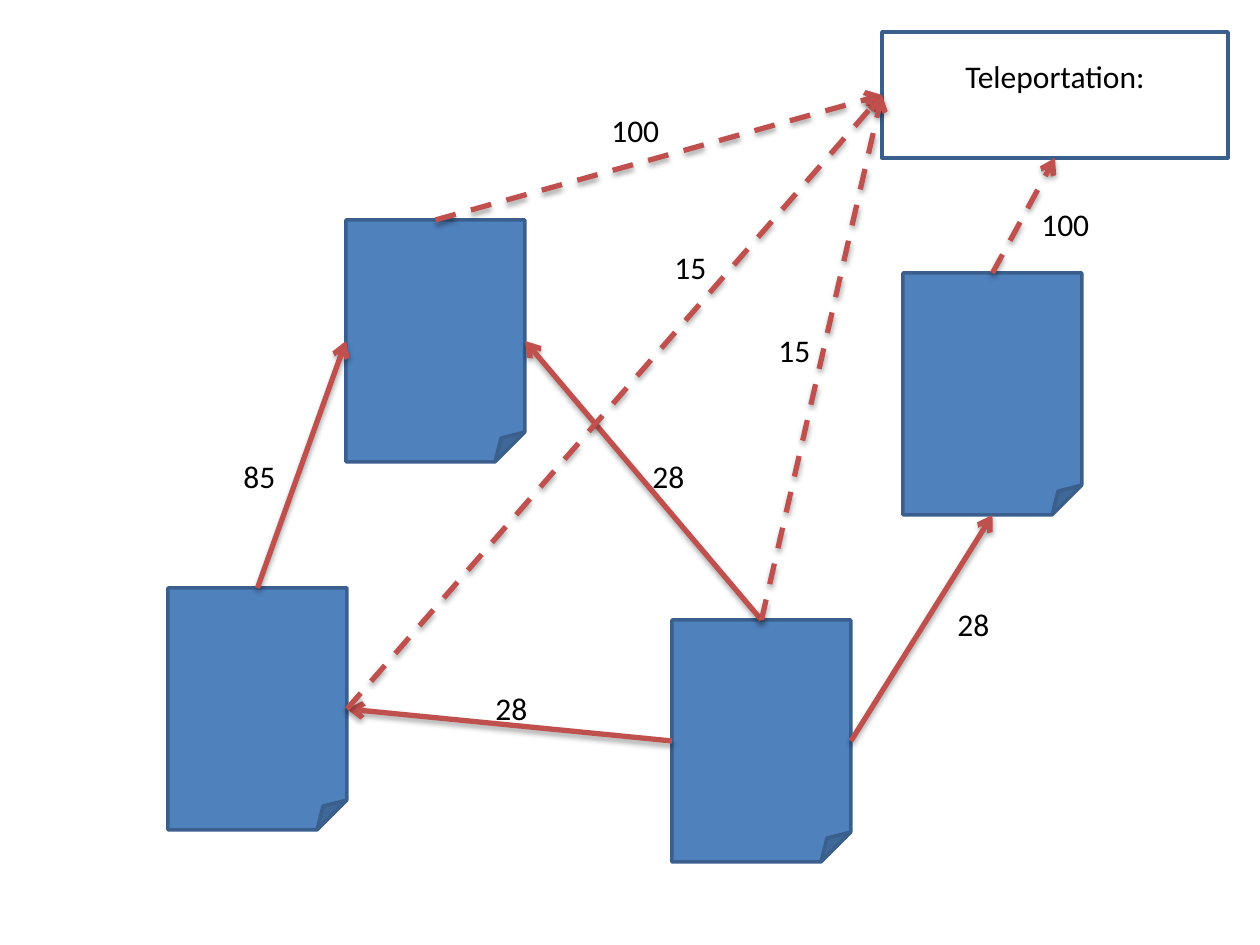
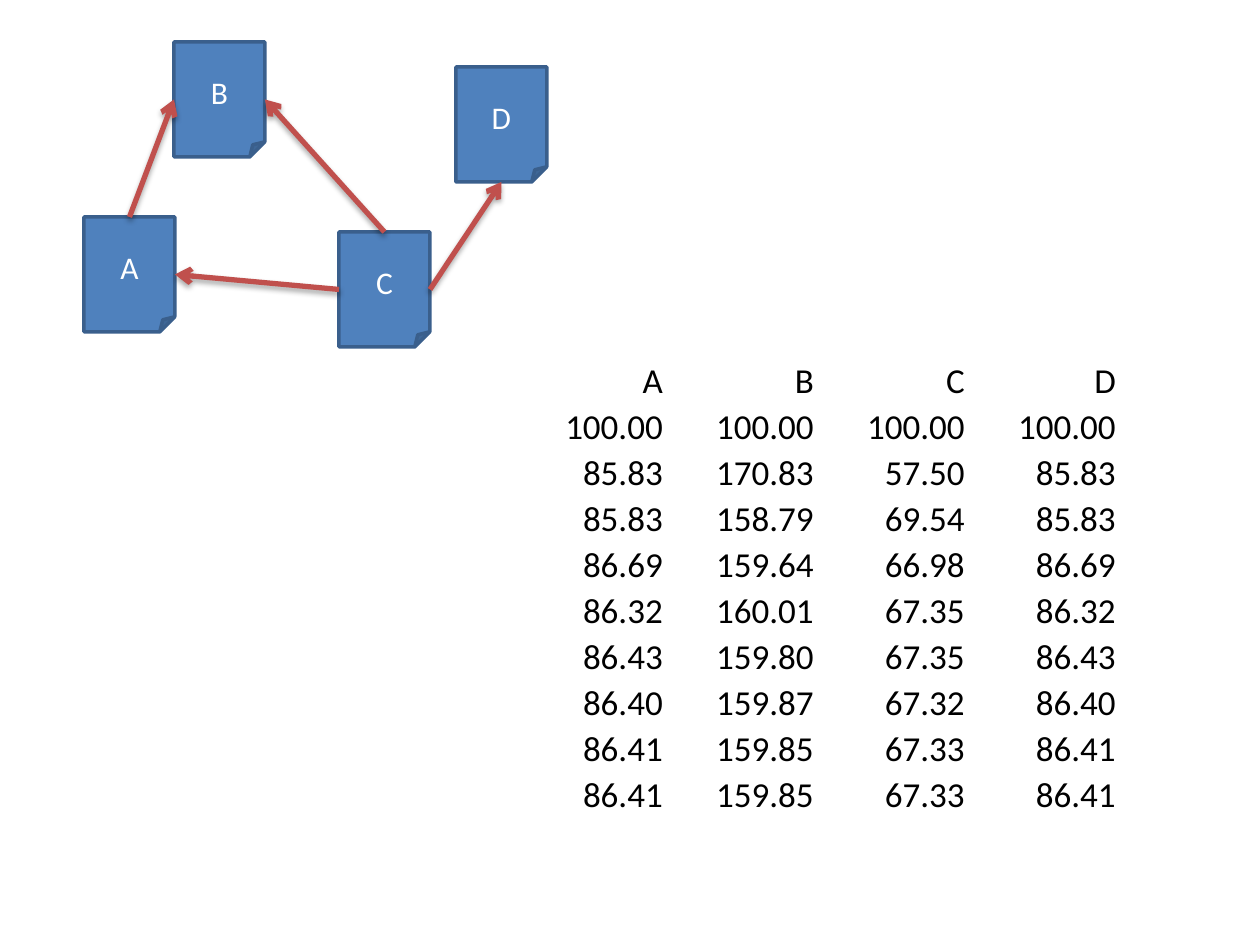
"""Build two slides on page rank: a link graph with teleportation, and its iterations."""
from lxml import etree
from pptx import Presentation
from pptx.dml.color import RGBColor
from pptx.enum.dml import MSO_LINE_DASH_STYLE as DASH
from pptx.enum.shapes import MSO_CONNECTOR as CONNECTOR, MSO_SHAPE as SHAPE
from pptx.enum.text import MSO_ANCHOR as ANCHOR, MSO_AUTO_SIZE as AUTO_SIZE, PP_ALIGN as ALIGN
from pptx.oxml import parse_xml
from pptx.oxml.ns import nsdecls, qn
from pptx.util import Pt

PX = 914400 // 126
FONT = "Calibri"
BLUE, DARK_BLUE, RED = "4F81BD", "3A5F8C", "C0504D"
BLACK, WHITE = "000000", "FFFFFF"
TOP, LEFT, BOTTOM, RIGHT = range(4)
PAGE_LINKS = [
    ("A", TOP, "B", LEFT),
    ("C", TOP, "B", RIGHT),
    ("C", LEFT, "A", RIGHT),
    ("C", RIGHT, "D", BOTTOM),
]
SHADOW = (
    f'<a:effectLst {nsdecls("a")}>'
    '<a:outerShdw blurRad="40000" dist="23000" dir="5400000" rotWithShape="0">'
    f'<a:srgbClr val="{BLACK}"><a:alpha val="35000"/></a:srgbClr>'
    '</a:outerShdw></a:effectLst>'
)


def write(text_frame, text, color, size=18, alignment=ALIGN.CENTER):
    text_frame.text = text
    paragraph = text_frame.paragraphs[0]
    paragraph.alignment = alignment
    font = paragraph.runs[0].font
    font.name, font.size = FONT, Pt(size)
    font.color.rgb = RGBColor.from_string(color)


def add_arrow(shapes, start, start_side, end, end_side, dashed=False):
    arrow = shapes.add_connector(CONNECTOR.STRAIGHT, start.left, start.top, end.left, end.top)
    arrow.begin_connect(start, start_side)
    arrow.end_connect(end, end_side)
    arrow.line.width = Pt(3)
    arrow.line.color.rgb = RGBColor.from_string(RED)
    if dashed:
        arrow.line.dash_style = DASH.DASH
    properties = arrow._element.spPr
    etree.SubElement(properties.find(qn("a:ln")), qn("a:tailEnd"), type="arrow")
    properties.append(parse_xml(SHADOW))


presentation = Presentation()
presentation.slide_width, presentation.slide_height = 1260 * PX, 945 * PX
blank = presentation.slide_layouts[6]
graph_slide = presentation.slides.add_slide(blank)
iteration_slide = presentation.slides.add_slide(blank)

graphs = [
    (graph_slide.shapes, 179, 242, False,
     {"A": (168, 588), "B": (346, 220), "C": (672, 620), "D": (903, 273)}),
    (iteration_slide.shapes.add_group_shape().shapes, 91, 115, True,
     {"A": (84, 217), "B": (174, 42), "C": (339, 232), "D": (456, 67)}),
]
graph_pages = []
for shapes, width, height, named, positions in graphs:
    pages = {}
    for name, (left, top) in positions.items():
        page = shapes.add_shape(SHAPE.FOLDED_CORNER, left * PX, top * PX, width * PX, height * PX)
        page.shadow.inherit = False
        page.fill.solid()
        page.fill.fore_color.rgb = RGBColor.from_string(BLUE)
        page.line.color.rgb = RGBColor.from_string(DARK_BLUE)
        page.line.width = Pt(2)
        if named:
            write(page.text_frame, name, WHITE)
            page.text_frame.vertical_anchor = ANCHOR.MIDDLE
        pages[name] = page
    for start, start_side, end, end_side in PAGE_LINKS:
        add_arrow(shapes, pages[start], start_side, pages[end], end_side)
    graph_pages.append(pages)

teleportation = graph_slide.shapes.add_shape(SHAPE.RECTANGLE, 882 * PX, 32 * PX, 346 * PX, 126 * PX)
teleportation.shadow.inherit = False
teleportation.fill.background()
teleportation.line.color.rgb = RGBColor.from_string(DARK_BLUE)
teleportation.line.width = Pt(2)
write(teleportation.text_frame, "Teleportation:", BLACK)
teleportation.text_frame.vertical_anchor = ANCHOR.MIDDLE
teleportation.text_frame.margin_bottom = 44 * PX

for name, page_side, box_side in [
    ("B", TOP, LEFT), ("D", TOP, BOTTOM), ("A", RIGHT, LEFT), ("C", TOP, LEFT),
]:
    add_arrow(graph_slide.shapes, graph_pages[0][name], page_side, teleportation, box_side, dashed=True)

for rank, left, top in [
    ("85", 231, 451), ("28", 483, 683), ("28", 640, 451), ("28", 945, 599),
    ("100", 599, 105), ("100", 1029, 199), ("15", 662, 242), ("15", 766, 325),
]:
    label = graph_slide.shapes.add_textbox(left * PX, top * PX, 136 * PX, 50 * PX)
    label.text_frame.word_wrap = True
    label.text_frame.auto_size = AUTO_SIZE.SHAPE_TO_FIT_TEXT
    write(label.text_frame, rank, BLACK, alignment=ALIGN.LEFT)

iterations = [
    ("A", "B", "C", "D"),
    ("100.00", "100.00", "100.00", "100.00"),
    ("85.83", "170.83", "57.50", "85.83"),
    ("85.83", "158.79", "69.54", "85.83"),
    ("86.69", "159.64", "66.98", "86.69"),
    ("86.32", "160.01", "67.35", "86.32"),
    ("86.43", "159.80", "67.35", "86.43"),
    ("86.40", "159.87", "67.32", "86.40"),
    ("86.41", "159.85", "67.33", "86.41"),
    ("86.41", "159.85", "67.33", "86.41"),
]
row_count, column_count = len(iterations), len(iterations[0])
table = iteration_slide.shapes.add_table(
    row_count, column_count, 513 * PX, 357 * PX, column_count * 151 * PX, row_count * 46 * PX
).table
table.first_row = table.horz_banding = False
for row, values in zip(table.rows, iterations):
    for cell, value in zip(row.cells, values):
        cell.fill.background()
        cell.margin_left = cell.margin_top = cell.margin_right = PX
        cell.margin_bottom = 0
        cell.vertical_anchor = ANCHOR.BOTTOM
        write(cell.text_frame, value, BLACK, 20, ALIGN.RIGHT)

presentation.save("out.pptx")
